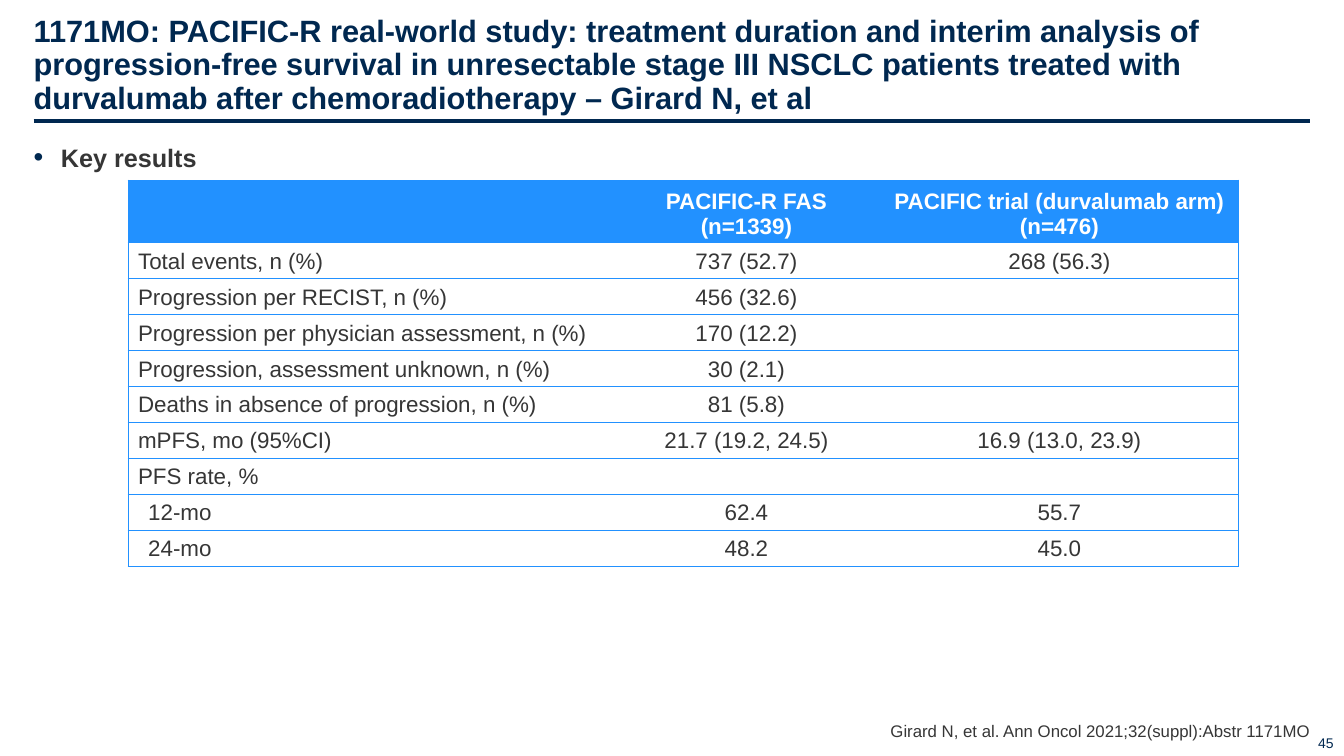
import dataclasses
from typing import Optional

import pptx
import pptx.dml.color
import pptx.enum.shapes
import pptx.enum.text
import pptx.oxml
import pptx.oxml.ns
import pptx.util
from lxml import etree

SLIDE_WIDTH = pptx.util.Inches(13.333)
SLIDE_HEIGHT = pptx.util.Inches(7.5)
GRID_COLUMNS, GRID_ROWS = 40, 22.5
NAVY, GREY, BLUE, WHITE = "002850", "363636", "2291FF", "FFFFFF"
FONT = "Arial"
ALIGN = pptx.enum.text.PP_ALIGN
ANCHOR = pptx.enum.text.MSO_ANCHOR

TABLE_LEFT, TABLE_TOP = 3.81, 5.36
TABLE_COLUMNS = (14.43, 7.95, 10.68)
HEADER_HEIGHT, ROW_HEIGHT = 1.8, 1.05
TABLE_SIZE = 16


@dataclasses.dataclass
class TextBlock:
    text: str
    left: float
    top: float
    width: float
    height: float
    size: float
    color: str
    bold: bool = False
    align: ALIGN = ALIGN.LEFT
    anchor: ANCHOR = ANCHOR.TOP
    insets: tuple[float, float, float, float] = (0, 0.05, 0, 0.05)
    line_spacing: Optional[float] = None
    bullet: bool = False


@dataclasses.dataclass
class ResultRow:
    label: str
    real_world: str = ""
    trial: str = ""
    indented: bool = False


BLOCKS = [
    TextBlock("45", 38.04, 21.3, 1.95, 1.2, 10, NAVY, align=ALIGN.RIGHT,
              anchor=ANCHOR.BOTTOM, insets=(0.1, 0.05, 0.1, 0.05)),
    TextBlock("1171MO: PACIFIC-R real-world study: treatment duration and interim "
              "analysis of progression-free survival in unresectable stage III NSCLC "
              "patients treated with durvalumab after chemoradiotherapy – Girard N, et al",
              1, 0.36, 38, 3.09, 22, NAVY, bold=True, anchor=ANCHOR.BOTTOM,
              insets=(0, 0.05, 0, 0), line_spacing=0.9),
    TextBlock("Key results", 1, 4.08, 38, 16.59, 18, GREY, bold=True, bullet=True),
    TextBlock("Girard N, et al. Ann Oncol 2021;32(suppl):Abstr 1171MO",
              20.94, 21.39, 18.06, 0.66, 12, GREY, align=ALIGN.RIGHT,
              anchor=ANCHOR.BOTTOM, insets=(0, 0, 0, 0)),
]

HEADER = ResultRow("", "PACIFIC-R FAS\n(n=1339)",
                   "PACIFIC trial (durvalumab arm)\n(n=476)")
RESULTS = [
    ResultRow("Total events, n (%)", "737 (52.7)", "268 (56.3)"),
    ResultRow("Progression per RECIST, n (%)", "456 (32.6)"),
    ResultRow("Progression per physician assessment, n (%)", "170 (12.2)"),
    ResultRow("Progression, assessment unknown, n (%)", "30 (2.1)"),
    ResultRow("Deaths in absence of progression, n (%)", "81 (5.8)"),
    ResultRow("mPFS, mo (95%CI)", "21.7 (19.2, 24.5)", "16.9 (13.0, 23.9)"),
    ResultRow("PFS rate, %"),
    ResultRow("12-mo", "62.4", "55.7", indented=True),
    ResultRow("24-mo", "48.2", "45.0", indented=True),
]


def across(columns: float) -> int:
    return round(SLIDE_WIDTH * columns / GRID_COLUMNS)


def down(rows: float) -> int:
    return round(SLIDE_HEIGHT * rows / GRID_ROWS)


def rgb(color: str) -> pptx.dml.color.RGBColor:
    return pptx.dml.color.RGBColor.from_string(color)


def set_insets(target, insets: tuple[float, float, float, float]) -> None:
    """Set left, top, right and bottom margins of a text frame or cell, in inches."""
    (target.margin_left, target.margin_top,
     target.margin_right, target.margin_bottom) = map(pptx.util.Inches, insets)


def add_text(paragraph, text: str, size: float, color: str, bold: bool) -> None:
    for index, line in enumerate(text.split("\n")):
        if index:
            paragraph.add_line_break()
        run = paragraph.add_run()
        run.text = line
        run.font.name = FONT
        run.font.size = pptx.util.Pt(size)
        run.font.bold = bold
        run.font.color.rgb = rgb(color)


def add_bullet(paragraph) -> None:
    paragraph.space_after = pptx.util.Pt(6)
    properties = paragraph._p.get_or_add_pPr()
    indent = pptx.util.Inches(0.27)
    properties.set("marL", str(indent))
    properties.set("indent", str(-indent))
    qn = pptx.oxml.ns.qn
    color = etree.SubElement(properties, qn("a:buClr"))
    etree.SubElement(color, qn("a:srgbClr"), val=NAVY)
    etree.SubElement(properties, qn("a:buSzPct"), val="110000")
    etree.SubElement(properties, qn("a:buFont"), typeface=FONT)
    etree.SubElement(properties, qn("a:buChar"), char="•")


def add_block(slide, block: TextBlock) -> None:
    shape = slide.shapes.add_textbox(across(block.left), down(block.top),
                                     across(block.width), down(block.height))
    frame = shape.text_frame
    frame.word_wrap = True
    frame.vertical_anchor = block.anchor
    set_insets(frame, block.insets)
    paragraph = frame.paragraphs[0]
    paragraph.alignment = block.align
    if block.line_spacing:
        paragraph.line_spacing = block.line_spacing
    if block.bullet:
        add_bullet(paragraph)
    add_text(paragraph, block.text, block.size, block.color, block.bold)


def add_title_rule(slide) -> None:
    line = slide.shapes.add_connector(pptx.enum.shapes.MSO_CONNECTOR.STRAIGHT,
                                      across(1), down(3.6), across(39), down(3.6))
    line.line.color.rgb = rgb(NAVY)
    line.line.width = pptx.util.Pt(2.25)
    etree.SubElement(line._element.spPr, pptx.oxml.ns.qn("a:effectLst"))


def set_borders(cell, column: int) -> None:
    """Rule the top and bottom of a cell, and its side on the table's outer edge."""
    qn = pptx.oxml.ns.qn
    visible = {"L": column == 0, "R": column == len(TABLE_COLUMNS) - 1,
               "T": True, "B": True}
    properties = cell._tc.get_or_add_tcPr()
    for index, (side, shown) in enumerate(visible.items()):
        border = etree.Element(qn(f"a:ln{side}"), w=str(pptx.util.Pt(0.75)))
        fill = etree.SubElement(border, qn("a:solidFill" if shown else "a:noFill"))
        if shown:
            etree.SubElement(fill, qn("a:srgbClr"), val=BLUE)
        properties.insert(index, border)


def fill_cell(cell, text: str, column: int, header: bool, indented: bool) -> None:
    cell.fill.solid()
    cell.fill.fore_color.rgb = rgb(BLUE if header else WHITE)
    cell.vertical_anchor = ANCHOR.BOTTOM if header else ANCHOR.MIDDLE
    set_insets(cell, (0.2 if indented and column == 0 else 0.1, 0.05, 0.1, 0.04))
    set_borders(cell, column)
    paragraph = cell.text_frame.paragraphs[0]
    paragraph.alignment = ALIGN.CENTER if column else ALIGN.LEFT
    if text:
        add_text(paragraph, text, TABLE_SIZE, WHITE if header else GREY, header)
    else:
        etree.SubElement(paragraph._p, pptx.oxml.ns.qn("a:endParaRPr"),
                         sz=str(TABLE_SIZE * 100))


def add_results_table(slide) -> None:
    rows = [HEADER, *RESULTS]
    heights = [HEADER_HEIGHT] + [ROW_HEIGHT] * len(RESULTS)
    table = slide.shapes.add_table(len(rows), len(TABLE_COLUMNS),
                                   across(TABLE_LEFT), down(TABLE_TOP),
                                   across(sum(TABLE_COLUMNS)), down(sum(heights))).table
    table.horz_banding = False
    for column, width in enumerate(TABLE_COLUMNS):
        table.columns[column].width = across(width)
    for index, (row, height) in enumerate(zip(rows, heights)):
        table.rows[index].height = down(height)
        for column, text in enumerate((row.label, row.real_world, row.trial)):
            fill_cell(table.cell(index, column), text, column, index == 0, row.indented)


def main() -> None:
    presentation = pptx.Presentation()
    presentation.slide_width = SLIDE_WIDTH
    presentation.slide_height = SLIDE_HEIGHT
    slide = presentation.slides.add_slide(presentation.slide_layouts[6])
    add_title_rule(slide)
    for block in BLOCKS:
        add_block(slide, block)
    add_results_table(slide)
    presentation.save("out.pptx")


if __name__ == "__main__":
    main()
